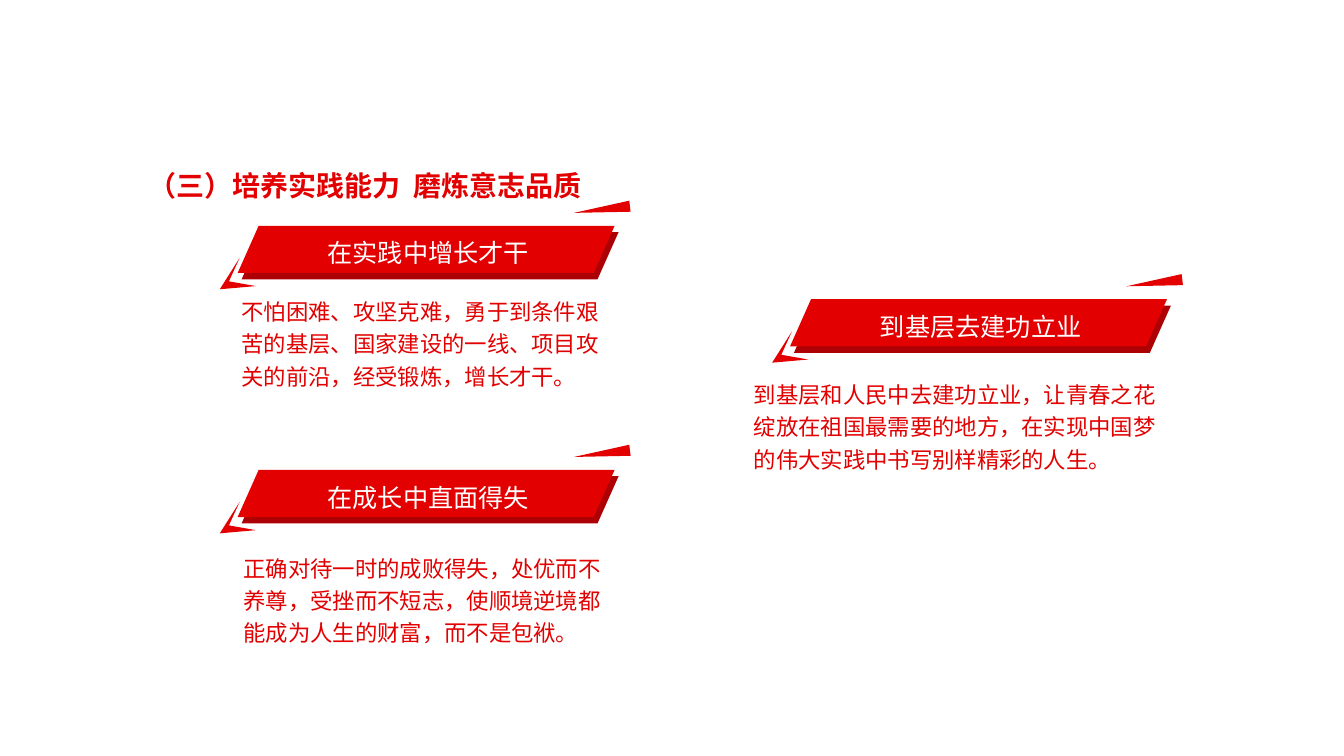
from lxml import etree
from pptx import Presentation
from pptx.dml.color import RGBColor
from pptx.enum.shapes import MSO_SHAPE
from pptx.enum.text import MSO_ANCHOR, MSO_AUTO_SIZE, PP_ALIGN
from pptx.oxml.ns import qn
from pptx.util import Cm, Pt

PARALLELOGRAM = MSO_SHAPE.PARALLELOGRAM
TRIANGLE = MSO_SHAPE.ISOSCELES_TRIANGLE
TOP = MSO_ANCHOR.TOP
GROW = MSO_AUTO_SIZE.SHAPE_TO_FIT_TEXT
LEFT, CENTER = PP_ALIGN.LEFT, PP_ALIGN.CENTER

COLORS = {"red": "E20000", "dark": "AD0004", "white": "FFFFFF"}
CJK_FONT = "Noto Sans CJK SC"
LATIN_FONT = "Courier New"
BAR_SIZE = (9.5, 1.19)
BARB = [(0.05, 0.81), (-0.22, 1.4), (0.46, 1.52), (-0.45, 1.6)]

BANNERS = [
    (5.99, 5.69, "在实践中增长才干"),
    (5.99, 11.84, "在成长中直面得失"),
    (19.91, 7.54, "到基层去建功立业"),
]
BODIES = [
    (18.75, 9.35, 10.8, "到基层和人民中去建功立业，让青春之花绽放在祖国最需要的地方，"
                        "在实现中国梦的伟大实践中书写别样精彩的人生。"),
    (5.84, 7.26, 9.58, "不怕困难、攻坚克难，勇于到条件艰苦的基层、国家建设的一线、"
                       "项目攻关的前沿，经受锻炼，增长才干。"),
    (5.89, 13.72, 9.58, "正确对待一时的成败得失，处优而不养尊，受挫而不短志，"
                        "使顺境逆境都能成为人生的财富，而不是包袱。"),
]


class Deck:
    """Holds the style and the current slide, and draws each kind of element."""

    def __init__(self):
        self.prs = Presentation()
        self.prs.slide_width, self.prs.slide_height = Cm(33.87), Cm(19.05)
        self.s = self.prs.slides.add_slide(self.prs.slide_layouts[5])

    def paint(self, sp, color):
        sp.shadow.inherit = False
        sp.fill.solid()
        sp.fill.fore_color.rgb = RGBColor.from_string(COLORS[color])
        sp.line.fill.background()

    def shape(self, shapes, kind, x, y, w, h, color):
        sp = shapes.add_shape(kind, Cm(x), Cm(y), Cm(w), Cm(h))
        self.paint(sp, color)
        return sp

    def run(self, p, text, size, color, font, bold=False):
        r = p.add_run()
        r.text = text
        r.font.size, r.font.bold, r.font.name = Pt(size), bold, font
        r.font.color.rgb = RGBColor.from_string(COLORS[color])
        rPr = r._r.get_or_add_rPr()
        rPr.set("lang", "zh-CN")
        etree.SubElement(rPr, qn("a:ea")).set("typeface", CJK_FONT)
        return rPr

    def text(self, shapes, x, y, w, h, text, size, color, font, spacing, align=LEFT):
        tf = shapes.add_textbox(Cm(x), Cm(y), Cm(w), Cm(h)).text_frame
        tf.word_wrap = True
        tf.auto_size = GROW
        p = tf.paragraphs[0]
        p.alignment, p.line_spacing = align, spacing
        self.run(p, text, size, color, font)

    def title(self, x, y, w, h, number_and_first, second):
        sp = self.s.shapes.title
        sp.left, sp.top, sp.width, sp.height = Cm(x), Cm(y), Cm(w), Cm(h)
        tf = sp.text_frame
        tf.word_wrap, tf.auto_size, tf.vertical_anchor = True, GROW, TOP
        p = tf.paragraphs[0]
        p.alignment = LEFT
        for text, tracking in ((number_and_first, 0), (" ", 450), (second, 0)):
            rPr = self.run(p, text, 20, "red", LATIN_FONT, True)
            rPr.set("spc", str(tracking))

    def banner(self, x, y, label):
        shapes = self.s.shapes.add_group_shape().shapes
        for dx, dy, color in ((0.1, 0.16, "dark"), (0, 0, "red")):
            bar = self.shape(shapes, PARALLELOGRAM, x + dx, y + dy, *BAR_SIZE, color)
            bar.adjustments[0] = 0.446
        points = [(Cm(x + dx), Cm(y + dy)) for dx, dy in BARB]
        outline = shapes.build_freeform(*points[0])
        outline.add_line_segments(points[1:], close=True)
        self.paint(outline.convert_to_shape(), "red")
        spike = self.shape(shapes, TRIANGLE, x + 9.04, y - 1.12, 0.28, 1.42, "red")
        spike.rotation = 263.2
        self.text(shapes, x + 0.69, y - 0.05, 8.23, 1.24, label,
                  18, "white", CJK_FONT, 1.3, CENTER)

    def body(self, x, y, w, text):
        self.text(self.s.shapes, x, y, w, 2.72, text, 16, "red", LATIN_FONT, 1.2)


def main():
    deck = Deck()
    for banner in BANNERS:
        deck.banner(*banner)
    for body in BODIES:
        deck.body(*body)
    deck.title(3.48, 4.11, 12.73, 1.12, "（三）培养实践能力", "磨炼意志品质")
    deck.prs.save("out.pptx")


if __name__ == "__main__":
    main()
